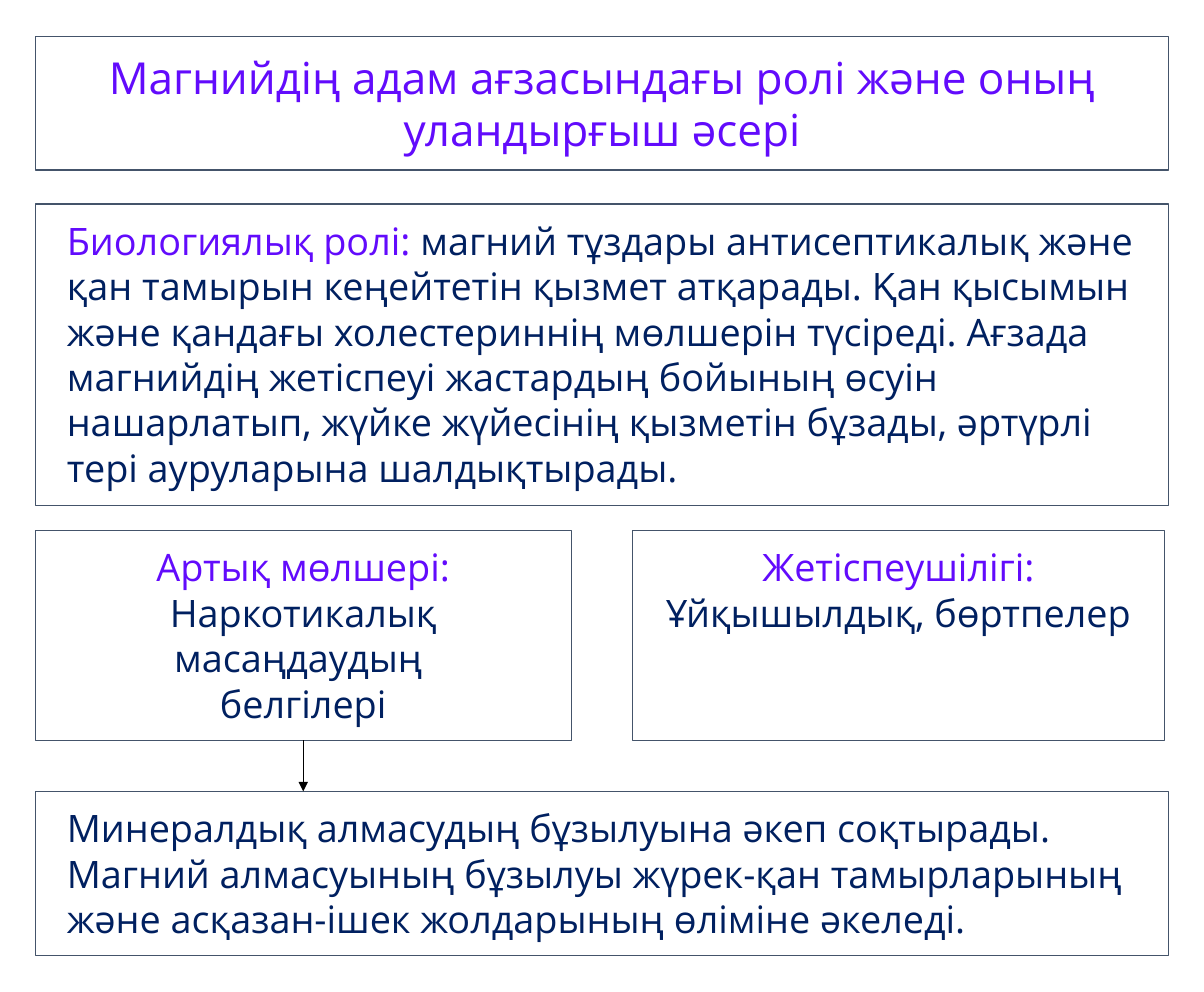
from lxml import etree
from pptx import Presentation
from pptx.dml.color import RGBColor
from pptx.enum.shapes import MSO_CONNECTOR, MSO_SHAPE
from pptx.enum.text import MSO_ANCHOR, MSO_AUTO_SIZE, PP_ALIGN
from pptx.oxml.ns import qn
from pptx.util import Inches, Pt

FONT = "Open Sans"
VIOLET, NAVY, SLATE, BLACK = "620BFC", "002060", "44546A", "000000"
LEFT, WIDTH = 0.31, 10
PAIR_TOP, PAIR_HEIGHT = 4.68, 1.85
RESULT_TOP = 6.98

TITLE = "Магнийдің адам ағзасындағы ролі және оның уландырғыш әсері"
ROLE = [[
    ("Биологиялық ролі: ", VIOLET),
    ("магний тұздары антисептикалық және қан тамырын кеңейтетін қызмет атқарады. "
     "Қан қысымын және қандағы холестериннің мөлшерін түсіреді. Ағзада магнийдің "
     "жетіспеуі жастардың бойының өсуін нашарлатып, жүйке жүйесінің қызметін бұзады, "
     "әртүрлі тері ауруларына шалдықтырады.", NAVY),
]]
EXCESS = [
    [("Артық мөлшері:", VIOLET)],
    [("Наркотикалық масаңдаудың ", NAVY)],
    [("белгілері", NAVY)],
]
SHORTAGE = [
    [("Жетіспеушілігі:", VIOLET)],
    [("Ұйқышылдық, бөртпелер", NAVY)],
]
RESULT = [[
    ("Минералдық алмасудың бұзылуына әкеп соқтырады. Магний алмасуының бұзылуы "
     "жүрек-қан тамырларының және асқазан-ішек жолдарының өліміне әкеледі.", NAVY),
]]


def color(value):
    return RGBColor.from_string(value)


def format_frame(shape, paragraphs, size, align):
    shape.line.color.rgb = color(SLATE)
    shape.line.width = Pt(0.75)
    frame = shape.text_frame
    frame.word_wrap = True
    frame.auto_size = MSO_AUTO_SIZE.NONE
    frame.vertical_anchor = MSO_ANCHOR.TOP
    frame.margin_left = frame.margin_right = Inches(0.28)
    frame.margin_top = frame.margin_bottom = Inches(0.12)
    for index, runs in enumerate(paragraphs):
        paragraph = frame.add_paragraph() if index else frame.paragraphs[0]
        paragraph.alignment = align
        paragraph.font.name = FONT
        paragraph.font.size = Pt(size)
        for text, run_color in runs:
            run = paragraph.add_run()
            run.text = text
            run.font.color.rgb = color(run_color)


def place_title(slide, left, top, width, height):
    title = slide.shapes.title
    title.left, title.top = Inches(left), Inches(top)
    title.width, title.height = Inches(width), Inches(height)
    format_frame(title, [[(TITLE, VIOLET)]], 28, PP_ALIGN.CENTER)


def add_box(slide, left, top, width, height, paragraphs, align=PP_ALIGN.LEFT):
    box = slide.shapes.add_shape(
        MSO_SHAPE.RECTANGLE, Inches(left), Inches(top), Inches(width), Inches(height))
    box.shadow.inherit = False
    box.fill.background()
    format_frame(box, paragraphs, 24, align)
    return box


def add_down_arrow(slide, box, bottom):
    center = box.left + box.width // 2
    arrow = slide.shapes.add_connector(
        MSO_CONNECTOR.STRAIGHT, center, box.top + box.height, center, Inches(bottom))
    arrow.begin_connect(box, 2)
    arrow.line.color.rgb = color(BLACK)
    arrow.line.width = Pt(0.5)
    etree.SubElement(arrow.line._get_or_add_ln(), qn("a:tailEnd"), type="triangle")
    etree.SubElement(arrow._element.spPr, qn("a:effectLst"))


def build_slide(presentation):
    slide = presentation.slides.add_slide(presentation.slide_layouts[5])
    place_title(slide, LEFT, 0.32, WIDTH, 1.18)
    add_box(slide, LEFT, 1.8, WIDTH, 2.66, ROLE)
    excess = add_box(slide, LEFT, PAIR_TOP, 4.73, PAIR_HEIGHT, EXCESS, PP_ALIGN.CENTER)
    add_box(slide, 5.58, PAIR_TOP, 4.69, PAIR_HEIGHT, SHORTAGE, PP_ALIGN.CENTER)
    add_box(slide, LEFT, RESULT_TOP, WIDTH, 1.45, RESULT)
    add_down_arrow(slide, excess, RESULT_TOP)


def main():
    presentation = Presentation()
    presentation.slide_width = Inches(10.62)
    presentation.slide_height = Inches(8.75)
    build_slide(presentation)
    presentation.save("out.pptx")


if __name__ == "__main__":
    main()
